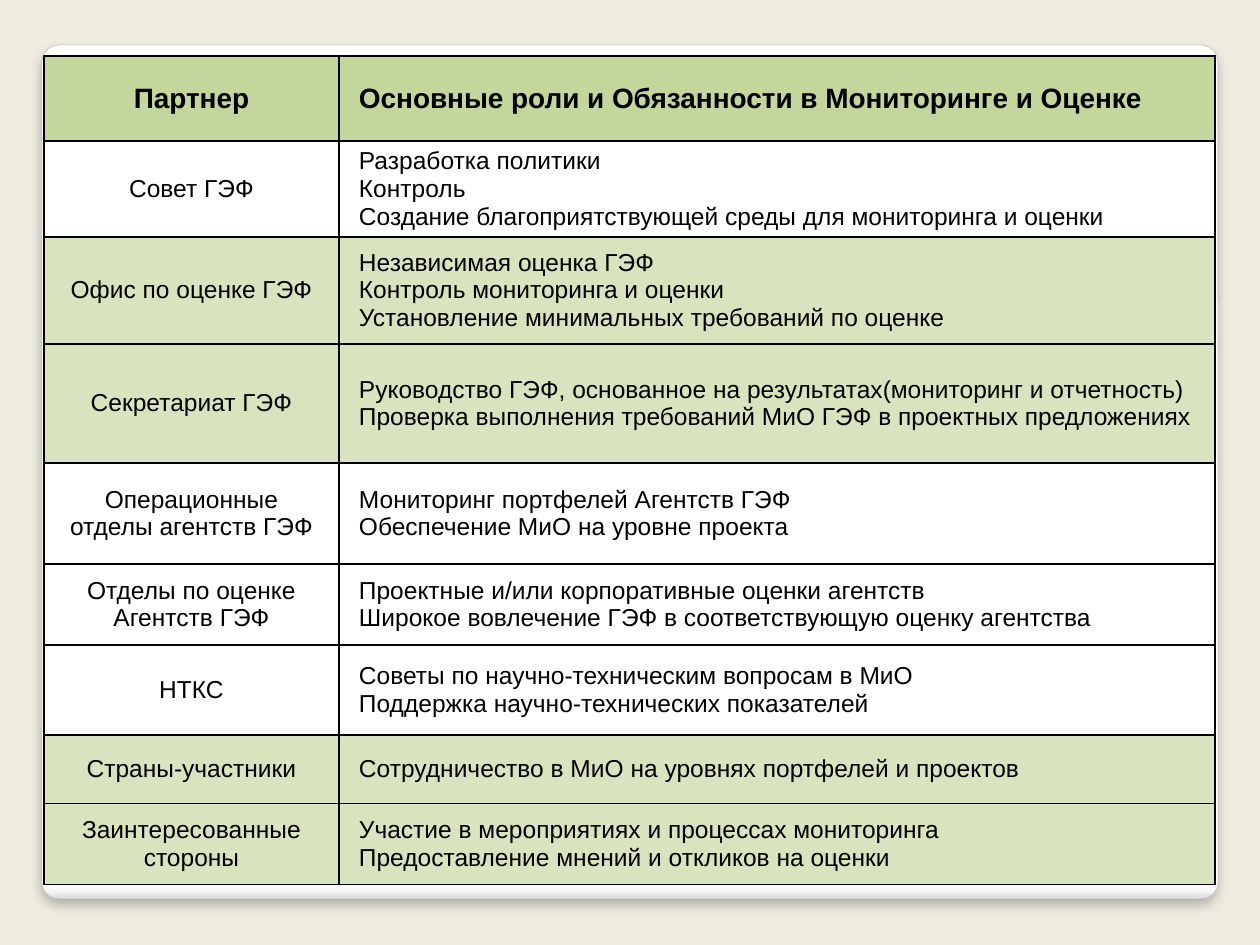
from lxml import etree
from pptx import Presentation, util as u
from pptx.dml.color import RGBColor
from pptx.enum import shapes, text
from pptx.oxml import parse_xml
from pptx.oxml.ns import nsdecls, qn

PX = 914400 // 126
BLACK = RGBColor(0, 0, 0)
WHITE = RGBColor(0xFF, 0xFF, 0xFF)
CREAM = RGBColor(0xEE, 0xEC, 0xE1)
GRAY = RGBColor(0xA4, 0xA4, 0xA4)
GREEN = RGBColor(0xC3, 0xD6, 0x9B)
PALE = RGBColor(0xD7, 0xE4, 0xBD)
SHEEN = [(0, "FFFFFF"), (98, "FFFFFF"), (99, "F7F7F7"), (100, "DADADA")]

COLS = [295, 876]
# height, fill, partner, roles
ROWS = [
    (85, GREEN, "Партнер",
     ["Основные роли и Обязанности в Мониторинге и Оценке"]),
    (96, WHITE, "Совет ГЭФ",
     ["Разработка политики", "Контроль",
      "Создание благоприятствующей среды для мониторинга и оценки"]),
    (107, PALE, "Офис по оценке ГЭФ",
     ["Независимая оценка ГЭФ", "Контроль мониторинга и оценки",
      "Установление минимальных требований по оценке"]),
    (119, PALE, "Секретариат ГЭФ",
     ["Руководство ГЭФ, основанное на результатах(мониторинг и отчетность)",
      "Проверка выполнения требований МиО ГЭФ в проектных предложениях"]),
    (101, WHITE, "Операционные отделы агентств ГЭФ",
     ["Мониторинг портфелей Агентств ГЭФ",
      "Обеспечение МиО на уровне проекта"]),
    (81, WHITE, "Отделы по оценке Агентств ГЭФ",
     ["Проектные и/или корпоративные оценки агентств",
      "Широкое вовлечение ГЭФ в соответствующую оценку агентства"]),
    (90, WHITE, "НТКС",
     ["Советы по научно-техническим вопросам в МиО",
      "Поддержка научно-технических показателей"]),
    (69, PALE, "Страны-участники",
     ["Сотрудничество в МиО на уровнях портфелей и проектов"]),
    (81, PALE, "Заинтересованные стороны",
     ["Участие в мероприятиях и процессах мониторинга",
      "Предоставление мнений и откликов на оценки"]),
]


def add_card(slide, x, y, w, h):
    """Rounded white panel with a sheen at its foot and a soft shadow."""
    card = slide.shapes.add_shape(shapes.MSO_SHAPE.ROUNDED_RECTANGLE,
                                  x * PX, y * PX, w * PX, h * PX)
    card.adjustments[0] = 0.02
    card.line.color.rgb = GRAY
    card.line.width = u.Pt(0.16)
    card.fill.gradient()
    card.fill.gradient_angle = 270
    stops = card.element.spPr.find(".//" + qn("a:gsLst"))
    for stop in list(stops):
        stops.remove(stop)
    for pos, tone in SHEEN:
        stop = etree.SubElement(stops, qn("a:gs"), pos=str(pos * 1000))
        etree.SubElement(stop, qn("a:srgbClr"), val=tone)
    card.shadow.inherit = False
    card.element.spPr.find(qn("a:effectLst")).append(parse_xml(
        f'<a:outerShdw {nsdecls("a")} blurRad="{u.Pt(6)}" dist="{u.Pt(4)}" '
        'dir="5400000" rotWithShape="0"><a:srgbClr val="000000">'
        '<a:alpha val="25000"/></a:srgbClr></a:outerShdw>'))


def add_edges(cell):
    props = cell._tc.get_or_add_tcPr()
    for side in ("lnL", "lnR", "lnT", "lnB"):
        props.append(parse_xml(
            f'<a:{side} {nsdecls("a")} w="{u.Pt(1)}"><a:solidFill>'
            f'<a:srgbClr val="{BLACK}"/></a:solidFill></a:{side}>'))


def fill_cell(cell, lines, tone, align, head):
    add_edges(cell)
    cell.fill.solid()
    cell.fill.fore_color.rgb = tone
    cell.margin_left = cell.margin_right = 20 * PX
    cell.margin_top = cell.margin_bottom = 0
    cell.vertical_anchor = text.MSO_ANCHOR.MIDDLE
    cell.text_frame.text = "\n".join(lines)
    for para in cell.text_frame.paragraphs:
        para.alignment = align
        for run in para.runs:
            font = run.font
            font.name = "Arial"
            font.size = u.Pt(16 if head else 14)
            font.bold = head
            font.color.rgb = BLACK


def add_roles(slide, x, y):
    """Table of partners and their roles."""
    high = sum(row[0] for row in ROWS)
    table = slide.shapes.add_table(len(ROWS), len(COLS), x * PX, y * PX,
                                   sum(COLS) * PX, high * PX).table
    table.horz_banding = False
    for col, wide in zip(table.columns, COLS):
        col.width = wide * PX
    for i, (tall, tone, name, roles) in enumerate(ROWS):
        table.rows[i].height = tall * PX
        fill_cell(table.cell(i, 0), [name], tone, text.PP_ALIGN.CENTER, i == 0)
        fill_cell(table.cell(i, 1), roles, tone, text.PP_ALIGN.LEFT, i == 0)


def main():
    prs = Presentation()
    prs.slide_width, prs.slide_height = 1260 * PX, 945 * PX
    slide = prs.slides.add_slide(prs.slide_layouts[6])
    slide.background.fill.solid()
    slide.background.fill.fore_color.rgb = CREAM
    add_card(slide, 42, 45, 1176, 854)
    add_roles(slide, 44, 56)
    prs.save("out.pptx")


if __name__ == "__main__":
    main()
